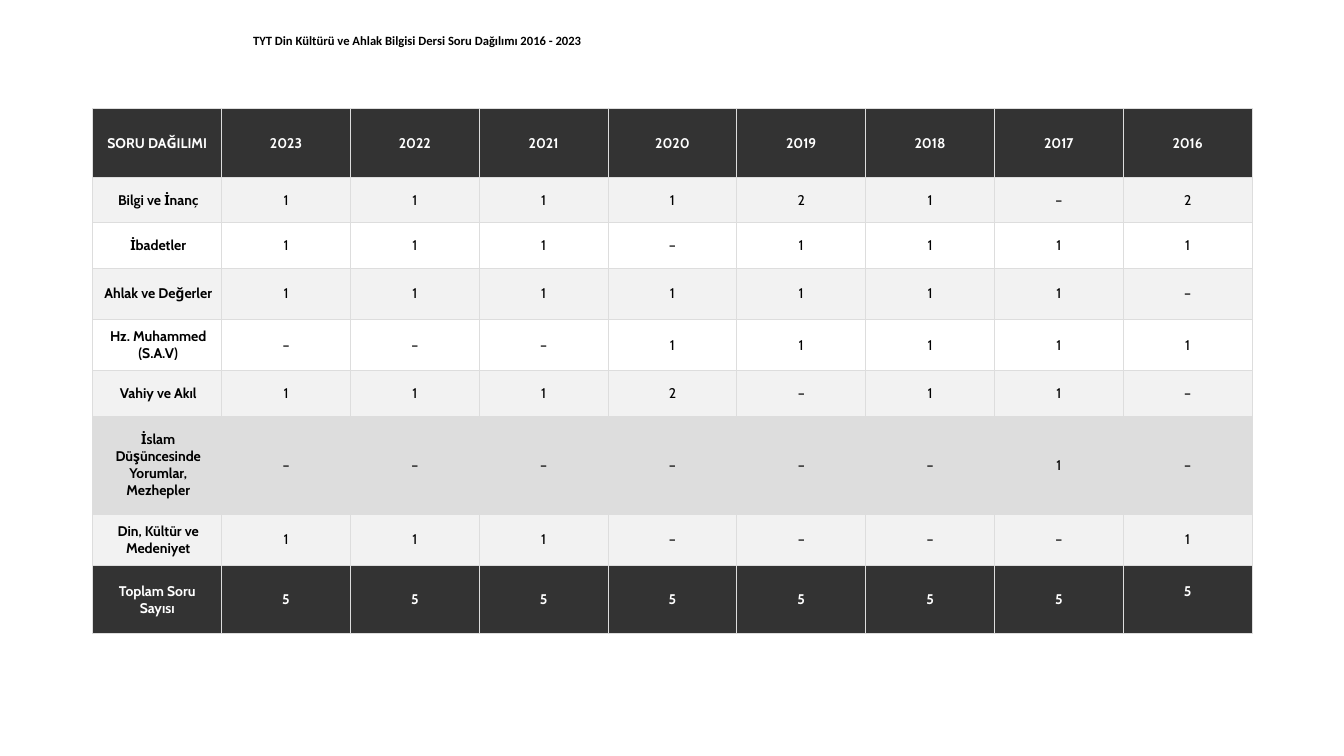
from lxml import etree
from pptx import Presentation
from pptx import util as u
from pptx.dml.color import RGBColor
from pptx.enum import text
from pptx.oxml.ns import qn

COLORS = {
    "dark": "333333",
    "light": "F2F2F2",
    "grey": "DDDDDD",
    "white": "FFFFFF",
    "black": "000000",
}
TITLE = "TYT Din Kültürü ve Ahlak Bilgisi Dersi Soru Dağılımı 2016 - 2023"
ROWS = [
    (0.68, "dark", "SORU DAĞILIMI", range(2023, 2015, -1)),
    (0.45, "light", "Bilgi ve İnanç", "111121–2"),
    (0.45, "white", "İbadetler", "111–1111"),
    (0.51, "light", "Ahlak ve Değerler", "1111111–"),
    (0.51, "white", "Hz. Muhammed (S.A.V)", "–––11111"),
    (0.45, "light", "Vahiy ve Akıl", "1112–11–"),
    (0.97, "grey", "İslam Düşüncesinde Yorumlar, Mezhepler", "––––––1–"),
    (0.51, "light", "Din, Kültür ve Medeniyet", "111––––1"),
    (0.68, "dark", "Toplam Soru Sayısı", "55555555"),
]
COLUMN_COUNT = 9
TABLE_LEFT, TABLE_TOP, TABLE_WIDTH = 0.92, 1.08, 11.5


def color(name):
    return RGBColor.from_string(COLORS[name])


def format_runs(paragraph, font_name, size, color_name, bold):
    for run in paragraph.runs:
        run.font.name = font_name
        run.font.size = u.Pt(size)
        run.font.bold = bold
        run.font.color.rgb = color(color_name)


def add_borders(cell):
    properties = cell._tc.get_or_add_tcPr()
    for position, side in enumerate(("lnL", "lnR", "lnT", "lnB")):
        line = etree.Element(qn(f"a:{side}"), w=str(u.Pt(0.75)))
        fill = etree.SubElement(line, qn("a:solidFill"))
        etree.SubElement(fill, qn("a:srgbClr"), val=COLORS["grey"])
        properties.insert(position, line)


def fill_cell(cell, value, fill_name, bold, margins):
    cell.text_frame.text = str(value)
    cell.vertical_anchor = text.MSO_ANCHOR.MIDDLE
    cell.margin_left, cell.margin_top, cell.margin_right, cell.margin_bottom = map(
        u.Inches, margins
    )
    cell.fill.solid()
    cell.fill.fore_color.rgb = color(fill_name)
    paragraph = cell.text_frame.paragraphs[0]
    paragraph.alignment = text.PP_ALIGN.CENTER
    font_color = "white" if fill_name == "dark" else "black"
    format_runs(paragraph, "Cabin", 10, font_color, bold)
    add_borders(cell)


def add_question_table(slide):
    height = sum(row[0] for row in ROWS)
    frame = slide.shapes.add_table(
        len(ROWS), COLUMN_COUNT,
        u.Inches(TABLE_LEFT), u.Inches(TABLE_TOP),
        u.Inches(TABLE_WIDTH), u.Inches(height),
    )
    table = frame.table
    table.first_row = False
    table.horz_banding = False
    for column in table.columns:
        column.width = u.Inches(TABLE_WIDTH / COLUMN_COUNT)
    for row_index, (row_height, fill_name, label, counts) in enumerate(ROWS):
        table.rows[row_index].height = u.Inches(row_height)
        for column_index, value in enumerate([label, *counts]):
            is_label = column_index == 0
            margins = [0.08] * 4
            if is_label:
                left = 0.08 if fill_name == "dark" else 0.1
                margins = [left, 0.02, 0.08, 0.02]
            elif row_index == len(ROWS) - 1 and column_index == COLUMN_COUNT - 1:
                margins[3] = 0.25
            fill_cell(
                table.cell(row_index, column_index), value, fill_name,
                is_label or fill_name == "dark", margins,
            )


def set_title(slide):
    title = slide.shapes.title
    title.left, title.top = u.Inches(2.41), u.Inches(0.28)
    title.width, title.height = u.Inches(5.86), u.Inches(0.56)
    title.fill.solid()
    title.fill.fore_color.rgb = color("white")
    frame = title.text_frame
    frame.text = TITLE
    frame.word_wrap = True
    frame.auto_size = text.MSO_AUTO_SIZE.NONE
    frame.vertical_anchor = text.MSO_ANCHOR.TOP
    paragraph = frame.paragraphs[0]
    paragraph.alignment = text.PP_ALIGN.LEFT
    format_runs(paragraph, "Calibri", 9, "black", True)


def main():
    presentation = Presentation()
    presentation.slide_width = u.Inches(13.33)
    presentation.slide_height = u.Inches(7.5)
    slide = presentation.slides.add_slide(presentation.slide_layouts[5])
    set_title(slide)
    add_question_table(slide)
    presentation.save("out.pptx")


if __name__ == "__main__":
    main()
